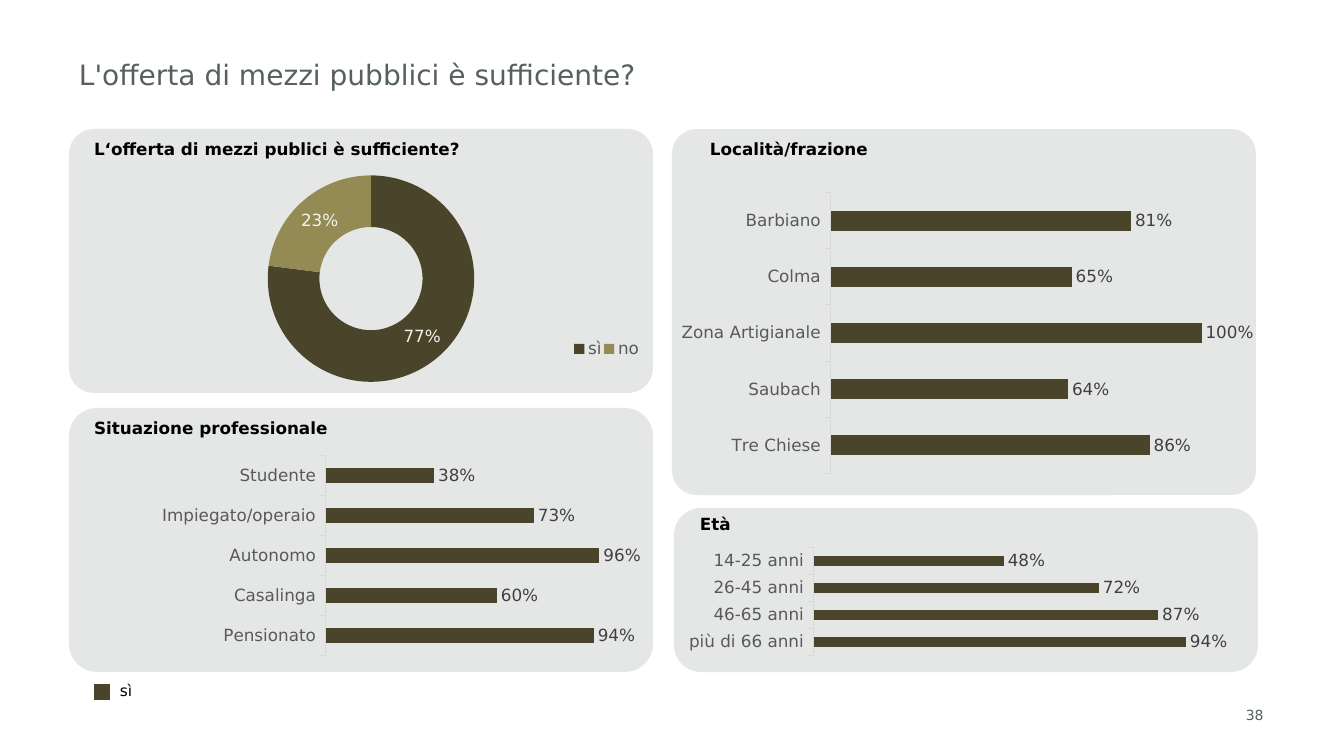
from pptx import Presentation
from pptx.chart.data import CategoryChartData
from pptx.dml.color import RGBColor
from pptx.enum.chart import XL_CHART_TYPE as ChartType
from pptx.enum.chart import XL_LABEL_POSITION as LabelPosition
from pptx.enum.chart import XL_LEGEND_POSITION as LegendPosition
from pptx.enum.chart import XL_TICK_MARK as TickMark
from pptx.enum.shapes import MSO_SHAPE as Shape
from pptx.enum.text import MSO_ANCHOR as Anchor
from pptx.oxml import parse_xml
from pptx.oxml.ns import nsdecls, qn
from pptx.util import Emu, Pt

FONT = "DejaVu Sans"
SLATE = RGBColor(0x56, 0x61, 0x5A)
OLIVE = RGBColor(0x4A, 0x45, 0x2A)
KHAKI = RGBColor(0x94, 0x8A, 0x54)
BLACK = RGBColor(0, 0, 0)
AXIS_TEXT = RGBColor(0x59, 0x59, 0x59)
AXIS_LINE = RGBColor(0xD9, 0xD9, 0xD9)
BAR_LABEL = RGBColor(0x40, 0x40, 0x40)
RING_LABEL = RGBColor(0xF2, 0xF2, 0xF2)

TITLE = "L'offerta di mezzi pubblici è sufficiente?"
PAGE_NUMBER = "38"
YES, NO = "sì", "no"

# Boxes are (left, top, width, height) in px; plots are fractions of the chart.
PANELS = [
    ((672, 129, 584, 366), 25),
    ((69, 129, 584, 264), 25),
    ((69, 408, 584, 264), 28),
    ((674, 508, 584, 164), 27),
]
HEADINGS = [
    ("L‘offerta di mezzi publici è sufficiente?", (94, 139, 558, 22)),
    ("Località/frazione", (710, 139, 513, 22)),
    ("Situazione professionale", (94, 418, 558, 22)),
    ("Età", (700, 514, 558, 35)),
]
ANSWERS = {YES: 0.77, NO: 0.23}
ANSWERS_BOX = (74, 153, 579, 239)
ANSWERS_PLOT = (0.135, 0.094, 0.756, 0.864)
ANSWERS_LEGEND = (0.86, 0.77, 0.12, 0.1)
BAR_CHARTS = [
    ((672, 171, 584, 324), (0.272, 0.067, 0.635, 0.867),
     {"Tre Chiese": 0.86, "Saubach": 0.64, "Zona Artigianale": 1,
      "Colma": 0.65, "Barbiano": 0.81}),
    ((69, 440, 584, 231), (0.44, 0.067, 0.488, 0.867),
     {"Pensionato": 0.94, "Casalinga": 0.6, "Autonomo": 0.96,
      "Impiegato/operaio": 0.73, "Studente": 0.38}),
    ((672, 532, 584, 139), (0.243, 0.111, 0.678, 0.779),
     {"più di 66 anni": 0.94, "46-65 anni": 0.87,
      "26-45 anni": 0.72, "14-25 anni": 0.48}),
]


def px(length):
    return Emu(round(length * 914400 / 100.8))


def place(box):
    return [px(length) for length in box]


def style_font(font, size, color, bold=False):
    font.name, font.size, font.bold = FONT, Pt(size), bold
    font.color.rgb = color


def add_filled_shape(slide, kind, box, color):
    shape = slide.shapes.add_shape(kind, *place(box))
    shape.shadow.inherit = False
    shape.fill.solid()
    shape.fill.fore_color.rgb = color
    shape.line.fill.background()
    return shape


def add_panel(slide, box, radius):
    panel = add_filled_shape(slide, Shape.ROUNDED_RECTANGLE, box, SLATE)
    panel.adjustments[0] = round(radius / min(box[2:]), 3)
    color = panel._element.spPr.find(".//" + qn("a:srgbClr"))
    color.append(parse_xml(f'<a:alpha {nsdecls("a")} val="15000"/>'))


def add_text(slide, text, box, size, color, bold=False, inset=True):
    text_frame = slide.shapes.add_textbox(*place(box)).text_frame
    text_frame.word_wrap = True
    if not inset:
        text_frame.margin_left = text_frame.margin_right = 0
        text_frame.margin_top = text_frame.margin_bottom = 0
    text_frame.text = text
    style_font(text_frame.paragraphs[0].runs[0].font, size, color, bold)
    return text_frame


def set_layout(parent, index, area, inner=False):
    """Fix the place of a chart part, as fractions of the chart."""
    for layout in parent.findall(qn("c:layout")):
        parent.remove(layout)
    target = '<c:layoutTarget val="inner"/>' if inner else ""
    modes = '<c:xMode val="edge"/><c:yMode val="edge"/>'
    sizes = "".join(f'<c:{name} val="{value}"/>' for name, value in zip("xywh", area))
    parent.insert(index, parse_xml(
        f'<c:layout {nsdecls("c")}><c:manualLayout>{target}{modes}{sizes}'
        "</c:manualLayout></c:layout>"))


def add_share_chart(slide, kind, box, plot_area, shares, label_color):
    data = CategoryChartData(number_format="0%")
    data.categories = list(shares)
    data.add_series(YES, list(shares.values()))
    chart = slide.shapes.add_chart(kind, *place(box), data).chart
    style_font(chart.font, 10, BLACK)
    chart.has_title = chart.has_legend = False
    plot = chart.plots[0]
    plot.has_data_labels = True
    labels = plot.data_labels
    labels.show_value, labels.show_percentage = True, False
    labels.number_format, labels.number_format_is_linked = "0%", False
    style_font(labels.font, 12, label_color)
    set_layout(chart._chartSpace.chart.plotArea, 0, plot_area, inner=True)
    return chart


def add_answers_chart(slide):
    chart = add_share_chart(slide, ChartType.DOUGHNUT, ANSWERS_BOX,
                            ANSWERS_PLOT, ANSWERS, RING_LABEL)
    series = chart.plots[0].series[0]
    for index, color in enumerate((OLIVE, KHAKI)):
        fill = series.points[index].format.fill
        fill.solid()
        fill.fore_color.rgb = color
    chart.has_legend = True
    legend = chart.legend
    legend.position = LegendPosition.RIGHT
    legend.include_in_layout = False
    style_font(legend.font, 12, AXIS_TEXT)
    set_layout(legend._element, 1, ANSWERS_LEGEND)


def add_bar_chart(slide, box, plot_area, shares):
    chart = add_share_chart(slide, ChartType.BAR_CLUSTERED, box,
                            plot_area, shares, BAR_LABEL)
    plot = chart.plots[0]
    plot.gap_width, plot.vary_by_categories = 182, False
    plot.data_labels.position = LabelPosition.OUTSIDE_END
    fill = plot.series[0].format.fill
    fill.solid()
    fill.fore_color.rgb = OLIVE
    values = chart.value_axis
    values.minimum_scale, values.maximum_scale = 0, 1
    values.has_major_gridlines = values.visible = False
    categories = chart.category_axis
    categories.major_tick_mark = TickMark.OUTSIDE
    style_font(categories.tick_labels.font, 12, AXIS_TEXT)
    categories.format.line.color.rgb = AXIS_LINE
    categories.format.line.width = Pt(0.75)


def main():
    presentation = Presentation()
    presentation.slide_width, presentation.slide_height = px(1344), px(756)
    slide = presentation.slides.add_slide(presentation.slide_layouts[6])
    for box, radius in PANELS:
        add_panel(slide, box, radius)
    add_text(slide, TITLE, (69, 53, 1141, 39), 20, SLATE)
    page_number = add_text(slide, PAGE_NUMBER, (1236, 696, 72, 38), 10, SLATE)
    page_number.vertical_anchor = Anchor.MIDDLE
    for heading, box in HEADINGS:
        add_text(slide, heading, box, 12, BLACK, bold=True, inset=False)
    add_answers_chart(slide)
    for box, plot_area, shares in BAR_CHARTS:
        add_bar_chart(slide, box, plot_area, shares)
    add_text(slide, YES, (110, 676, 50, 29), 11, BLACK)
    add_filled_shape(slide, Shape.RECTANGLE, (94, 684, 16, 16), OLIVE)
    presentation.save("out.pptx")


if __name__ == "__main__":
    main()
